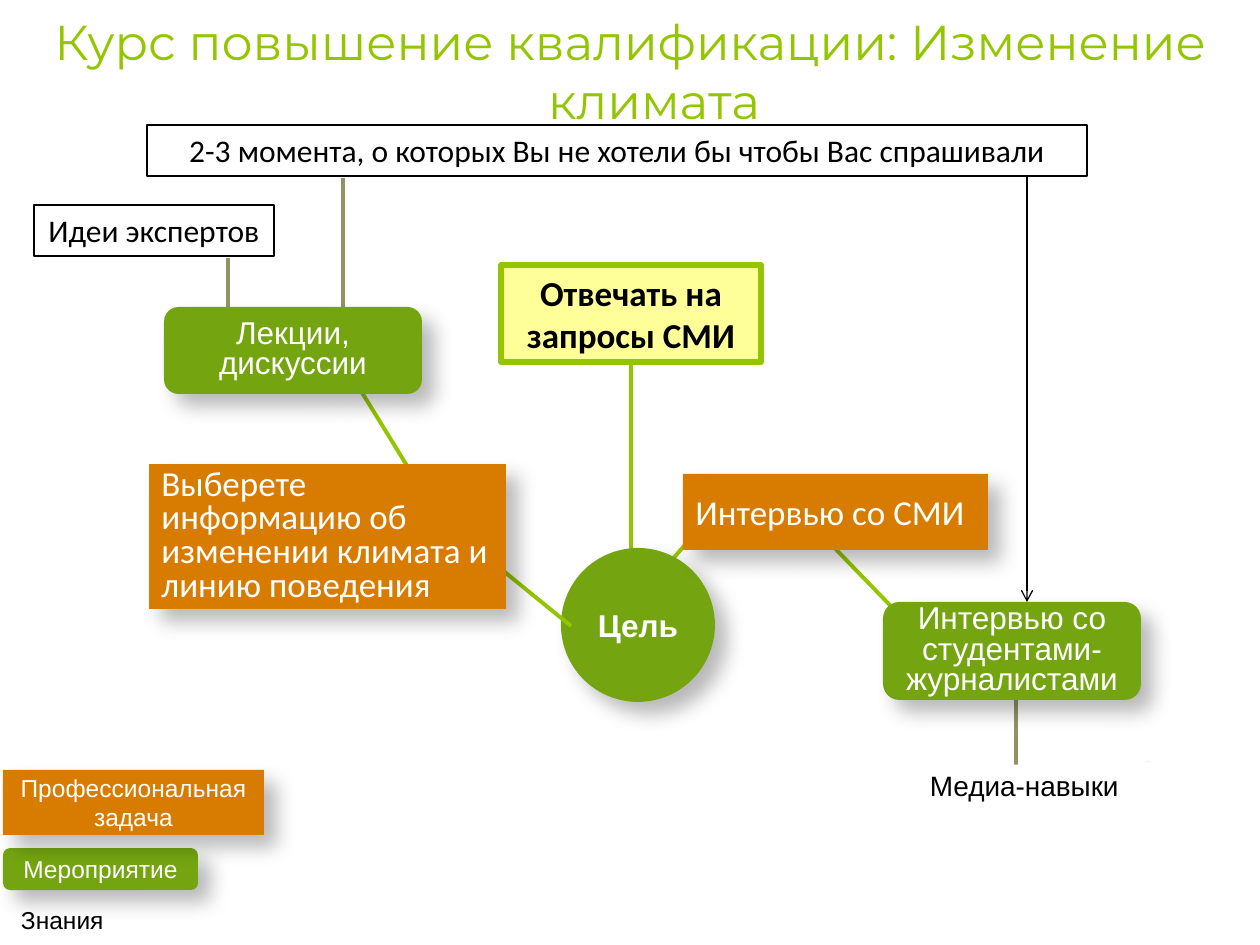
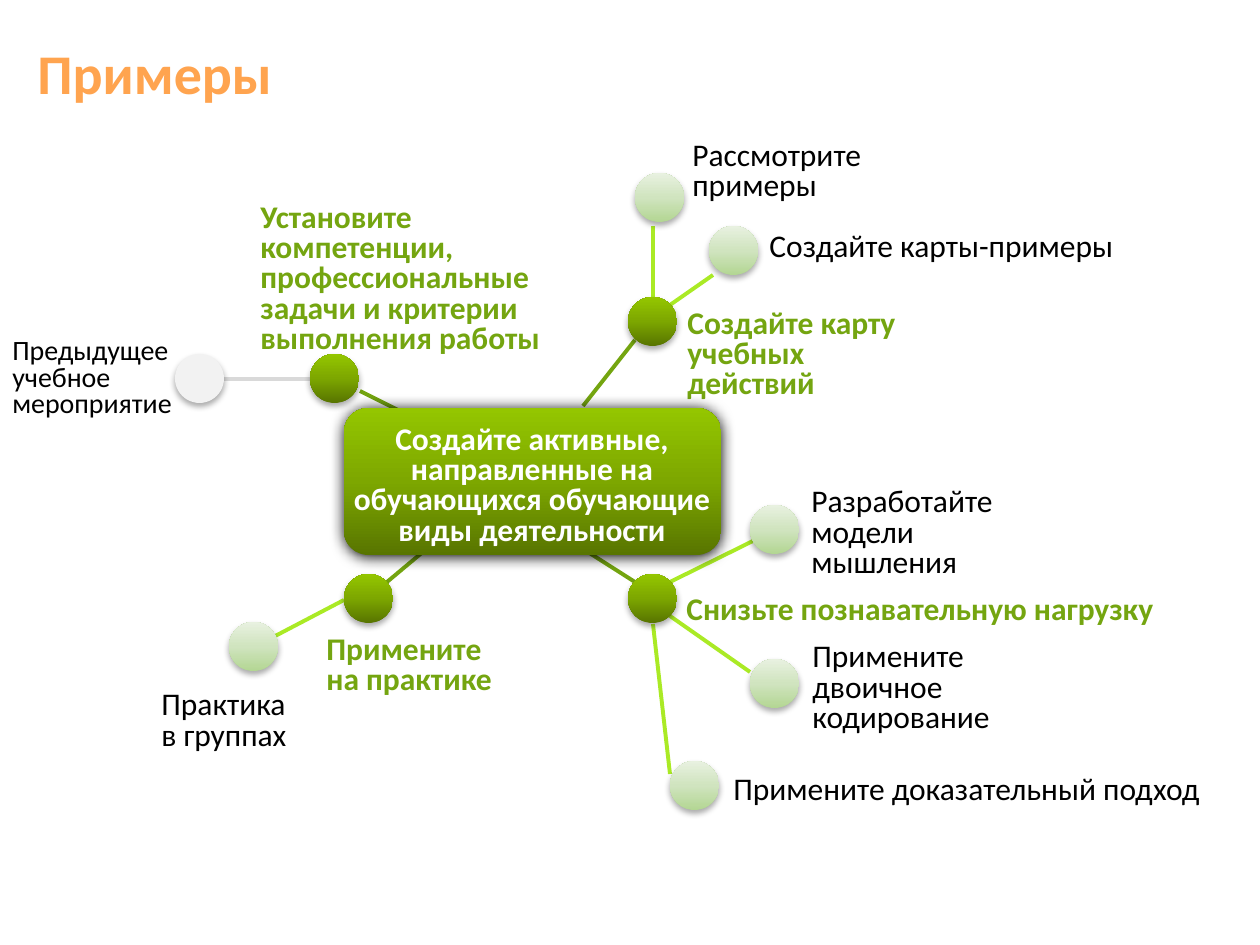
from dataclasses import dataclass

from lxml import etree
from pptx import Presentation
from pptx.dml.color import RGBColor
from pptx.enum.shapes import MSO_CONNECTOR, MSO_SHAPE
from pptx.enum.text import MSO_ANCHOR, PP_ALIGN
from pptx.oxml.ns import qn
from pptx.slide import Slide
from pptx.util import Pt

EMU_PER_PX = 914400 / 126
STRAIGHT = MSO_CONNECTOR.STRAIGHT
RECT, ROUNDED = MSO_SHAPE.RECTANGLE, MSO_SHAPE.ROUNDED_RECTANGLE
OVAL, SCROLL = MSO_SHAPE.OVAL, MSO_SHAPE.HORIZONTAL_SCROLL
LEFT, CENTER = PP_ALIGN.LEFT, PP_ALIGN.CENTER
TOP, MIDDLE = MSO_ANCHOR.TOP, MSO_ANCHOR.MIDDLE

WHITE, BLACK, YELLOW = "FFFFFF", "000000", "FFFF99"
GREEN, LIME, BRIGHT = "74A510", "93C600", "AAEA25"
ORANGE, OLIVE, TITLE_LIME, TITLE_ORANGE = "D77C01", "909465", "94C600", "FFA44F"
GREY, PALE_GREY = "D9D9D9", "F2F2F2"
DEEP_GREENS = ("587500", "7DA700", "94C600")
PALE_GREENS = ("B3D693", "D0E4BF", "E8F1E0")

# Shadows: opacity in percent, blur and distance in points, angle in degrees
CARD_SHADOW = (28, 11.8, 10, 45)
DOT_SHADOW = (32, 3.5, 2.2, 90)
HUB_SHADOW = (100, 8.5, 1, 90)

HANGING = 48
DOT = 49


def px(length):
    return round(length * EMU_PER_PX)


def colour(value):
    return RGBColor.from_string(value)


def child(parent, tag, **attributes):
    """Append a DrawingML element with the given attributes."""
    values = {name: str(value) for name, value in attributes.items()}
    return etree.SubElement(parent, qn(tag), values)


@dataclass
class Region:
    """A part of a slide; everything in it is placed from its corner."""
    page: Slide
    left: int
    top: int

    def place(self, box):
        x, y, width, height = box
        return px(self.left + x), px(self.top + y), px(width), px(height)

    def line(self, start, end, stroke, arrow=False):
        x1, y1, x2, y2 = self.place((*start, 0, 0))[:2] + self.place((*end, 0, 0))[:2]
        connector = self.page.shapes.add_connector(STRAIGHT, x1, y1, x2, y2)
        connector.line.color.rgb = colour(stroke)
        connector.line.width = Pt(0.75 if arrow else 2.25)
        if arrow:
            child(connector.line._get_or_add_ln(), "a:tailEnd", type="arrow")
        child(connector._element.spPr, "a:effectLst")

    def shape(self, kind, box, fill, stroke=None, weight=0.75, shadow=None):
        shape = self.page.shapes.add_shape(kind, *self.place(box))
        shape.shadow.inherit = False
        if isinstance(fill, tuple):
            set_gradient(shape, fill)
        else:
            shape.fill.solid()
            shape.fill.fore_color.rgb = colour(fill)
        if stroke:
            shape.line.color.rgb = colour(stroke)
            shape.line.width = Pt(weight)
        else:
            shape.line.fill.background()
        if shadow:
            set_shadow(shape, *shadow)
        return shape

    def text(self, box, words, size, ink, **style):
        write(self.page.shapes.add_textbox(*self.place(box)), words, size, ink, **style)


def set_gradient(shape, stops):
    """Blend upwards through three colours."""
    shape.fill.gradient()
    gradient = shape._element.spPr.find(qn("a:gradFill"))
    for part in list(gradient):
        gradient.remove(part)
    stop_list = child(gradient, "a:gsLst")
    for position, value in zip((0, 50000, 100000), stops):
        child(child(stop_list, "a:gs", pos=position), "a:srgbClr", val=value)
    child(gradient, "a:lin", ang=270 * 60000, scaled=0)


def set_shadow(shape, opacity, blur, distance, angle):
    effects = shape._element.spPr.find(qn("a:effectLst"))
    outer = child(effects, "a:outerShdw", blurRad=Pt(blur), dist=Pt(distance),
                  dir=angle * 60000, algn="ctr", rotWithShape=0)
    child(child(outer, "a:srgbClr", val=BLACK), "a:alpha", val=opacity * 1000)


def write(shape, words, size, ink, font="Calibri", bold=False, align=LEFT,
          anchor=MIDDLE, spacing=None, hanging=False):
    frame = shape.text_frame
    frame.word_wrap = True
    frame.vertical_anchor = anchor
    para = frame.paragraphs[0]
    para.text = words
    para.alignment = align
    para.line_spacing = spacing
    para.font.name = font
    para.font.size = Pt(size)
    para.font.bold = bold
    para.font.color.rgb = colour(ink)
    if hanging:
        properties = para._p.get_or_add_pPr()
        properties.set("marL", str(px(HANGING)))
        properties.set("indent", str(-px(HANGING)))


# Cards shared by the course map and its legend
def task_card(region, box, words, size=20, **style):
    write(region.shape(RECT, box, ORANGE, shadow=CARD_SHADOW), words, size, WHITE, **style)


def event_card(region, box, words, size=18, spacing=0.8):
    write(region.shape(ROUNDED, box, GREEN, shadow=CARD_SHADOW), words, size, WHITE,
          font="Arial", align=CENTER, spacing=spacing)


def knowledge_card(region, box, words, size):
    write(region.shape(SCROLL, box, WHITE, WHITE, 2), words, size, BLACK,
          font="Arial", spacing=0.8)


def note_card(region, box, words):
    write(region.shape(RECT, box, WHITE, BLACK), words, 18, BLACK,
          align=CENTER, anchor=TOP, hanging=True)


def draw_course_map(region):
    # Links that lie behind the cards
    for start, end, stroke in (
        ((194, 235), (194, 133), OLIVE),
        ((682, 384), (625, 450), LIME),
        ((881, 506), (789, 411), LIME),
        ((388, 365), (295, 214), LIME),
        ((597, 237), (597, 451), LIME),
        ((982, 565), (982, 665), OLIVE),
    ):
        region.line(start, end, stroke)
    knowledge_card(region, (876, 634, 242, 60), "Медиа-навыки", 16)

    # Goal and the answer it leads to
    goal = region.shape(OVAL, (527, 423, 154, 154), GREEN, shadow=CARD_SHADOW)
    write(goal, "Цель", 18, WHITE, font="Arial", bold=True, align=CENTER)
    region.line((309, 204), (309, 53), OLIVE)
    answer = region.shape(RECT, (467, 140, 260, 97), YELLOW, LIME, 3)
    write(answer, "Отвечать на запросы СМИ", 20, BLACK, bold=True, align=CENTER, anchor=TOP)

    # Tasks and events
    region.line((413, 400), (537, 501), LIME)
    task_card(region, (115, 339, 357, 145),
              "Выберете информацию об изменении климата и линию поведения", spacing=0.8)
    task_card(region, (649, 349, 305, 76), "Интервью со СМИ")
    event_card(region, (130, 182, 258, 87), "Лекции, дискуссии")
    event_card(region, (849, 477, 258, 98), "Интервью со студентами-журналистами")

    # Expert notes
    note_card(region, (113, 0, 940, 51),
              "2-3 момента, о которых Вы не хотели бы чтобы Вас спрашивали")
    region.line((993, 51), (993, 477), BLACK, arrow=True)
    note_card(region, (0, 80, 240, 51), "Идеи экспертов")


def draw_legend(region):
    knowledge_card(region, (0, 130, 181, 45), "Знания", 14)
    event_card(region, (0, 78, 195, 42), "Мероприятие", 14, spacing=None)
    task_card(region, (0, 0, 261, 65), "Профессиональная задача", 14,
              font="Arial", align=CENTER)


def draw_activity_map(region):
    # Links
    links = {
        GREEN: (((583, 260), (635, 194)), ((580, 401), (635, 436)),
                ((436, 395), (387, 436)), ((422, 276), (360, 245))),
        BRIGHT: (((670, 159), (713, 129)), ((670, 436), (757, 393)),
                 ((670, 470), (750, 526)), ((344, 454), (237, 510)),
                 ((653, 151), (653, 80)), ((653, 478), (670, 628))),
        GREY: (((310, 233), (224, 233)),),
    }
    for stroke, ends in links.items():
        for start, end in ends:
            region.line(start, end, stroke)

    # Dots
    dots = {
        DEEP_GREENS: ((628, 151), (628, 428), (344, 428), (310, 208)),
        PALE_GREENS: ((709, 80), (750, 359), (750, 513), (229, 476), (635, 27), (670, 615)),
        PALE_GREY: ((175, 208),),
    }
    for fill, corners in dots.items():
        for corner in corners:
            region.shape(OVAL, (*corner, DOT, DOT), fill, shadow=DOT_SHADOW)

    # Names of the main steps
    for box, words in (
        ((248, 52, 359, 165),
         "Установите компетенции, профессиональные задачи и критерии выполнения работы"),
        ((675, 158, 253, 105), "Создайте карту учебных действий"),
        ((674, 444, 530, 43), "Снизьте познавательную нагрузку"),
        ((314, 484, 216, 74), "Примените на практике"),
    ):
        region.text(box, words, 18, GREEN, bold=True, anchor=TOP, spacing=0.8)

    # Names of the detailed steps
    for box, words, size in (
        ((0, 149, 200, 168), "Предыдущее учебное мероприятие", 16),
        ((757, 76, 399, 53), "Создайте карты-примеры", 18),
        ((799, 349, 228, 78), "Разработайте модели мышления", 18),
        ((800, 504, 256, 78), "Примените двоичное кодирование", 18),
        ((149, 537, 154, 78), "Практика в группах", 18),
        ((680, 0, 300, 53), "Рассмотрите примеры", 18),
        ((721, 606, 494, 78), "Примените доказательный подход", 18),
    ):
        region.text(box, words, size, BLACK, spacing=0.8)

    # Central activity
    region.shape(ROUNDED, (344, 262, 377, 147), DEEP_GREENS, shadow=HUB_SHADOW)
    region.text((314, 275, 436, 131),
                "Создайте активные, направленные на обучающихся обучающие виды деятельности",
                18, WHITE, bold=True, align=CENTER, spacing=0.8)


def build_course_page(page):
    draw_course_map(Region(page, 34, 125))
    Region(page, 0, 5).text((0, 0, 1260, 131),
                            "Курс повышение квалификации: Изменение климата", 28, TITLE_LIME,
                            font="Montserrat", align=CENTER, anchor=TOP, hanging=True)
    draw_legend(Region(page, 3, 770))


def build_examples_page(page):
    Region(page, 25, 9).text((0, 0, 1235, 126), "Примеры", 32, TITLE_ORANGE, bold=True)
    draw_activity_map(Region(page, 0, 146))


def main():
    deck = Presentation()
    deck.slide_width, deck.slide_height = px(1260), px(945)
    blank = deck.slide_layouts[6]
    for build in (build_course_page, build_examples_page):
        build(deck.slides.add_slide(blank))
    deck.save("out.pptx")


if __name__ == "__main__":
    main()
